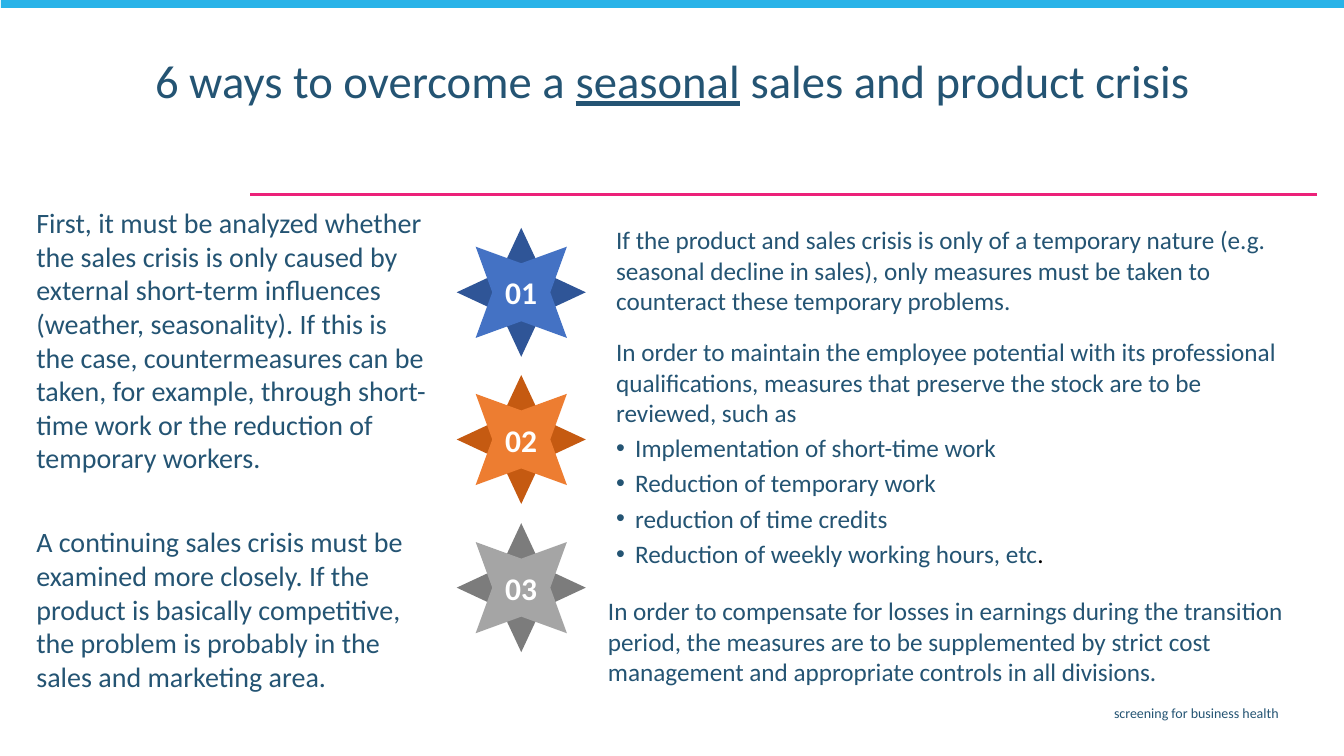
from lxml.etree import SubElement
from pptx import Presentation
from pptx.dml.color import RGBColor
from pptx.enum.shapes import MSO_CONNECTOR, MSO_SHAPE
from pptx.enum.text import MSO_ANCHOR as ANCHOR, PP_ALIGN as ALIGN
from pptx.oxml.ns import qn
from pptx.util import Pt

PX = 9144
COLORS = {
    "text": "245473", "white": "FFFFFF", "black": "000000",
    "bar": "29B3E8", "rule": "EC2179",
    "blue": "4472C4", "blue_dark": "2F5597",
    "orange": "ED7D31", "orange_dark": "C55A11",
    "gray": "A5A5A5", "gray_dark": "7C7C7C",
}


def rgb(name):
    return RGBColor.from_string(COLORS[name])


def add_text(paragraph, text, size=18, color="text", bold=False, underline=False):
    run = paragraph.add_run()
    run.text = text
    font = run.font
    font.name = "Calibri"
    font.size = Pt(size)
    font.bold = bold
    font.underline = underline
    font.color.rgb = rgb(color)


def add_bullet(paragraph):
    properties = paragraph._p.get_or_add_pPr()
    properties.set("marL", str(19 * PX))
    properties.set("indent", str(-19 * PX))
    SubElement(properties, qn("a:buFont")).set("typeface", "Arial")
    SubElement(properties, qn("a:buChar")).set("char", "•")


class SlideBuilder:
    def __init__(self, slide):
        self.slide = slide

    def shape(self, kind, left, top, width, height, color, rotation=0):
        shape = self.slide.shapes.add_shape(
            kind, left * PX, top * PX, width * PX, height * PX)
        shape.shadow.inherit = False
        shape.fill.solid()
        shape.fill.fore_color.rgb = rgb(color)
        shape.line.fill.background()
        shape.rotation = rotation
        return shape

    def rule(self, start, end, y, color):
        connector = self.slide.shapes.add_connector(
            MSO_CONNECTOR.STRAIGHT, start * PX, y * PX, end * PX, y * PX)
        connector.line.color.rgb = rgb(color)
        connector.line.width = Pt(1.5)
        SubElement(connector._element.spPr, qn("a:effectLst"))

    def text_box(self, left, top, width, height, paragraphs, gap=0, inset=(10, 5),
                 align=ALIGN.LEFT, anchor=ANCHOR.TOP, wrap=True, line_spacing=None,
                 bullets=False, **style):
        box = self.slide.shapes.add_textbox(left * PX, top * PX, width * PX, height * PX)
        frame = box.text_frame
        frame.word_wrap = wrap
        frame.vertical_anchor = anchor
        frame.margin_left = frame.margin_right = inset[0] * PX
        frame.margin_top = frame.margin_bottom = inset[1] * PX
        for index, runs in enumerate(paragraphs):
            paragraph = frame.add_paragraph() if index else frame.paragraphs[0]
            paragraph.alignment = align
            if line_spacing:
                paragraph.line_spacing = line_spacing
            if index:
                paragraph.space_before = Pt(gap)
                if bullets:
                    add_bullet(paragraph)
            for text, changes in runs:
                add_text(paragraph, text, **{**style, **changes})

    def star(self, top, number, color):
        for tone, rotation in ((f"{color}_dark", 0), (color, 45)):
            star = self.shape(MSO_SHAPE.STAR_4_POINT, 453, top, 128, 128, tone, rotation)
            star.adjustments[0] = 0.225
        self.text_box(491, top + 40, 52, 48, [[(f"{number:02}", {})]],
                      align=ALIGN.CENTER, anchor=ANCHOR.MIDDLE, wrap=False,
                      size=22.5, color="white", bold=True)


def main():
    presentation = Presentation()
    presentation.slide_width = 1333 * PX
    presentation.slide_height = 750 * PX
    builder = SlideBuilder(presentation.slides.add_slide(presentation.slide_layouts[6]))

    builder.rule(1306, 248, 193, "rule")
    builder.shape(MSO_SHAPE.RECTANGLE, 1, -2, 1334, 10, "bar")
    builder.text_box(365, 694, 913, 29, [[("screening for business health", {})]],
                     align=ALIGN.RIGHT, size=10)
    builder.text_box(144, 53, 1093, 101, [[
        ("6 ways to overcome a ", {}),
        ("seasonal", {"underline": True}),
        (" sales and product crisis", {}),
    ]], line_spacing=0.9, size=33.3)
    builder.text_box(27, 200, 408, 539, [
        [("First, it must be analyzed whether the sales crisis is only caused by external "
          "short-term influences (weather, seasonality). If this is the case, "
          "countermeasures can be taken, for example, through short-time work or the "
          "reduction of temporary workers.", {})],
        [("A continuing sales crisis must be examined more closely. If the product is "
          "basically competitive, the problem is probably in the sales and marketing "
          "area.", {})],
    ], gap=36, inset=(9, 4), size=20)

    for index, color in enumerate(("blue", "orange", "gray")):
        builder.star(226 + 293 * index // 2, index + 1, color)

    measures = (
        (607, 221, 675, 95, [
            [("If the product and sales crisis is only of a temporary nature (e.g. seasonal "
              "decline in sales), only measures must be taken to counteract these "
              "temporary problems.", {})],
        ]),
        (607, 332, 675, 240, [
            [("In order to maintain the employee potential with its professional "
              "qualifications, measures that preserve the stock are to be reviewed, "
              "such as", {})],
            [("Implementation of short-time work", {})],
            [("Reduction of temporary work", {})],
            [("reduction of time credits", {})],
            [("Reduction of weekly working hours, etc", {}), (".", {"color": "black"})],
        ]),
        (599, 589, 683, 95, [
            [("In order to compensate for losses in earnings during the transition period, "
              "the measures are to be supplemented by strict cost management and "
              "appropriate controls in all divisions.", {})],
        ]),
    )
    for left, top, width, height, paragraphs in measures:
        builder.text_box(left, top, width, height, paragraphs,
                         gap=3.6, inset=(4, 2), bullets=True)

    presentation.save("out.pptx")


if __name__ == "__main__":
    main()
